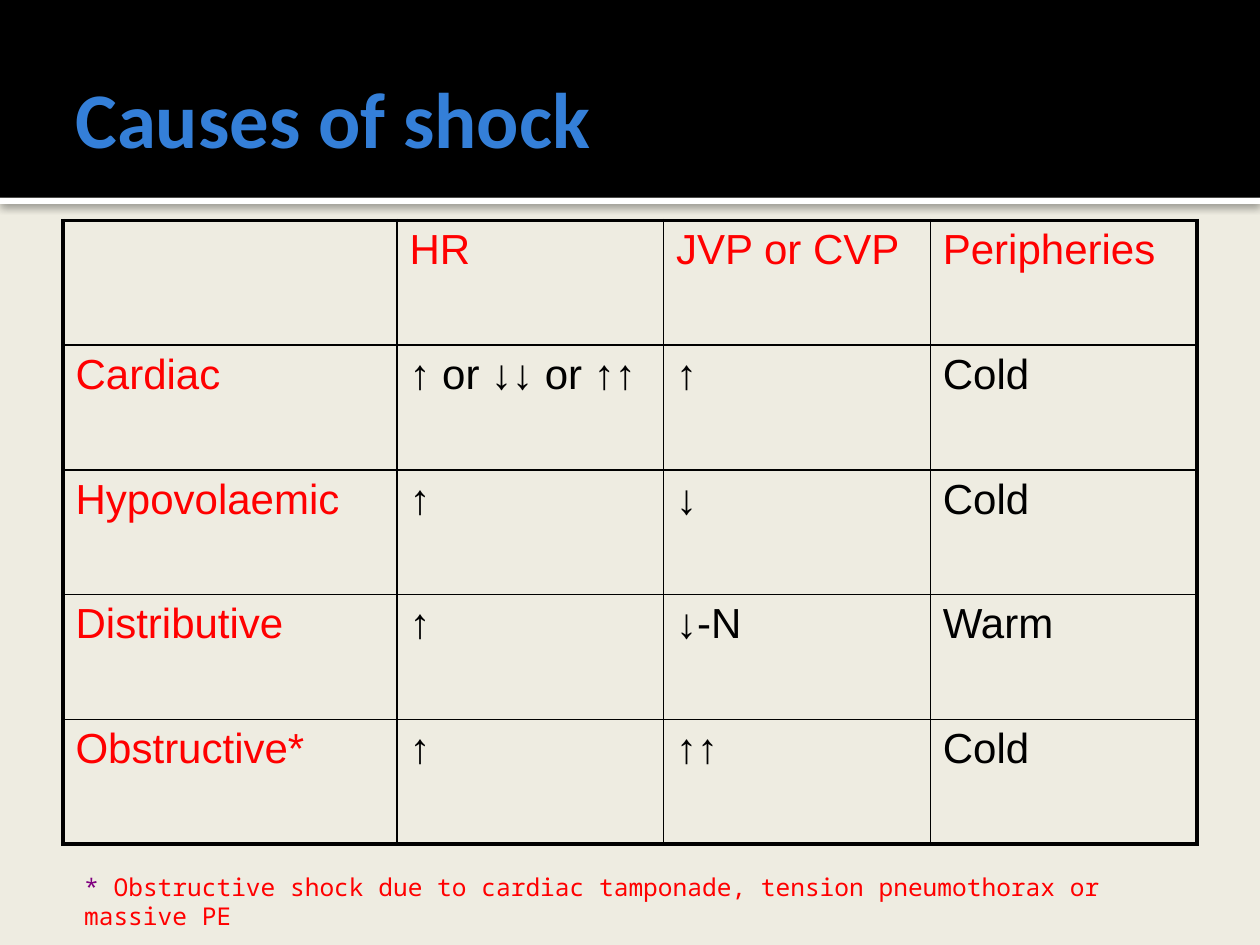
from lxml import etree
from pptx import Presentation
from pptx.dml.color import RGBColor
from pptx.enum import shapes, text
from pptx.oxml import parse_xml
from pptx.oxml.ns import nsdecls, qn
from pptx.util import Pt

BLACK = RGBColor(0x00, 0x00, 0x00)
WHITE = RGBColor(0xFF, 0xFF, 0xFF)
CREAM = RGBColor(0xEE, 0xEC, 0xE1)
BLUE = RGBColor(0x34, 0x7F, 0xD8)
RED = RGBColor(0xFF, 0x00, 0x00)
PURPLE = RGBColor(0x80, 0x00, 0x80)

TITLE = "Causes of shock"
ROWS = [
    ("", "HR", "JVP or CVP", "Peripheries"),
    ("Cardiac", "↑ or ↓↓ or ↑↑", "↑", "Cold"),
    ("Hypovolaemic", "↑", "↓", "Cold"),
    ("Distributive", "↑", "↓-N", "Warm"),
    ("Obstructive*", "↑", "↑↑", "Cold"),
]
NOTE = [
    ("* ", PURPLE),
    ("Obstructive shock due to cardiac tamponade, tension pneumothorax or massive PE", RED),
]

WIDE, HIGH = 720, 540
BAND = 113
GRID = (36, 126, 648, 356.4)
COLS = (190.8, 152.4, 152.4, 152.4)
THIN, THICK = 1, 2.25


def style(font, name, size, color, bold=False):
    font.name, font.size, font.bold = name, Pt(size), bold
    font.color.rgb = color


def add_bar(slide, top, height, color):
    bar = slide.shapes.add_shape(
        shapes.MSO_SHAPE.RECTANGLE, 0, Pt(top), Pt(WIDE), Pt(height))
    bar.shadow.inherit = False
    bar.fill.solid()
    bar.fill.fore_color.rgb = color
    bar.line.fill.background()
    return bar


def add_shadow(shape):
    effects = shape._element.spPr.find(qn("a:effectLst"))
    effects.append(parse_xml(
        f'<a:outerShdw {nsdecls("a")} blurRad="{Pt(5)}" dist="{Pt(0.8)}" '
        'dir="5400000" algn="t" rotWithShape="0"><a:srgbClr val="000000">'
        '<a:alpha val="60000"/></a:srgbClr></a:outerShdw>'))


def add_box(slide, *place):
    box = slide.shapes.add_textbox(*map(Pt, place))
    box.text_frame.word_wrap = True
    return box.text_frame


def set_edges(cell, widths):
    """Draw the left, right, top and bottom borders, ahead of the cell fill."""
    props = cell._tc.get_or_add_tcPr()
    for i, (side, width) in enumerate(zip("LRTB", widths)):
        edge = etree.Element(qn(f"a:ln{side}"), w=str(Pt(width)))
        fill = etree.SubElement(edge, qn("a:solidFill"))
        etree.SubElement(fill, qn("a:srgbClr"), val=str(BLACK))
        props.insert(i, edge)


def add_grid(slide):
    table = slide.shapes.add_table(len(ROWS), len(COLS), *map(Pt, GRID)).table
    table.first_row = table.horz_banding = False
    for col, width in zip(table.columns, COLS):
        col.width = Pt(width)
    for r, row in enumerate(ROWS):
        table.rows[r].height = Pt(GRID[3] / len(ROWS))
        for c, words in enumerate(row):
            cell = table.cell(r, c)
            cell.text = words
            cell.fill.background()
            head = r == 0 or c == 0
            style(cell.text_frame.paragraphs[0].font, "Arial", 24,
                  RED if head else BLACK)
            outer = (c == 0, c == len(COLS) - 1, r == 0, r == len(ROWS) - 1)
            set_edges(cell, [THICK if edge else THIN for edge in outer])


def main():
    deck = Presentation()
    deck.slide_width, deck.slide_height = Pt(WIDE), Pt(HIGH)
    slide = deck.slides.add_slide(deck.slide_layouts[6])
    slide.background.fill.solid()
    slide.background.fill.fore_color.rgb = CREAM

    add_shadow(add_bar(slide, BAND, 3.6, WHITE))
    add_bar(slide, 0, BAND, BLACK)

    title = add_box(slide, 36, 21.6, 576, 90)
    title.vertical_anchor = text.MSO_ANCHOR.MIDDLE
    title.margin_right = Pt(3.6)
    title.text = TITLE
    style(title.paragraphs[0].font, "Calibri", 45, BLUE, bold=True)

    add_grid(slide)

    note = add_box(slide, 41, 494.6, 596.2, 24.5).paragraphs[0]
    for words, color in NOTE:
        run = note.add_run()
        run.text = words
        style(run.font, "Noto Sans Mono", 14, color)

    deck.save("out.pptx")


if __name__ == "__main__":
    main()
